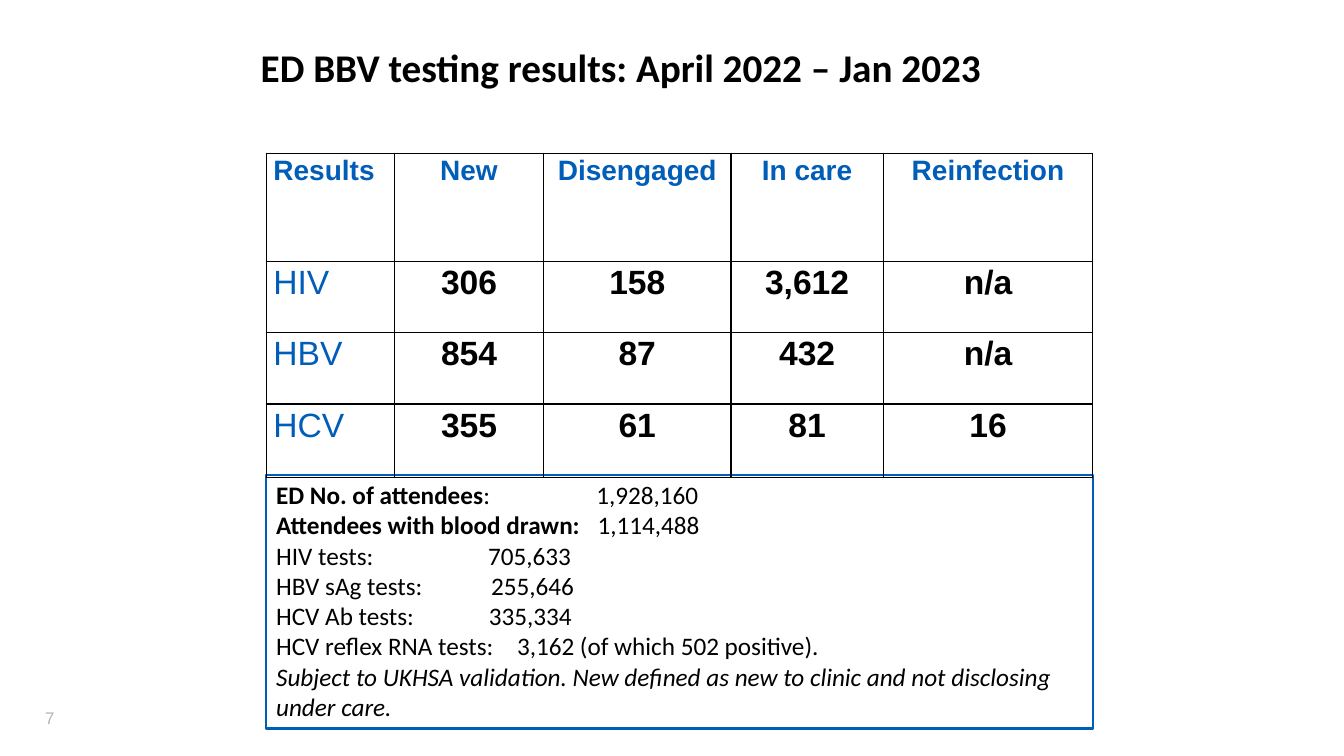
from lxml import etree
from pptx import Presentation
from pptx.dml.color import RGBColor
from pptx.enum.shapes import MSO_SHAPE
from pptx.enum.text import MSO_ANCHOR, PP_ALIGN
from pptx.oxml.ns import qn
from pptx.util import Cm, Pt

RECTANGLE = MSO_SHAPE.RECTANGLE
TOP = MSO_ANCHOR.TOP
LEFT, CENTER = PP_ALIGN.LEFT, PP_ALIGN.CENTER

COLORS = {"blue": "005EB8", "black": "000000", "grey": "ADB6BE"}

TITLE = "ED BBV testing results: April 2022 – Jan 2023"
PAGE_NUMBER = "7"
RESULTS = [
    ("Results", "New", "Disengaged", "In care", "Reinfection"),
    ("HIV", "306", "158", "3,612", "n/a"),
    ("HBV", "854", "87", "432", "n/a"),
    ("HCV", "355", "61", "81", "16"),
]
COLUMN_WIDTHS = (3.23, 3.76, 4.72, 3.84, 5.28)
ROW_HEIGHTS = (2.72, 1.8, 1.8, 1.85)
ATTENDANCE = [
    ("ED No. of attendees", ":\t1,928,160", 8.07),
    ("Attendees with blood drawn:", "\t1,114,488", 8.1),
    ("", "HIV tests:\t705,633", 5.34),
    ("", "HBV sAg tests:\t255,646", 5.42),
    ("", "HCV Ab tests:\t335,334", 5.36),
    ("", "HCV reflex RNA tests:\t3,162 (of which 502 positive).", 6.07),
]
CAVEAT = ("Subject to UKHSA validation. New defined as new to clinic "
          "and not disclosing under care.")

PANEL_LEFT = 6.71
PANEL_WIDTH = sum(COLUMN_WIDTHS)
TABLE_TOP = 3.86


def rgb(name):
    return RGBColor.from_string(COLORS[name])


def set_font(font, family, size, color, bold=None, italic=None):
    font.name, font.size = family, Pt(size)
    font.color.rgb = rgb(color)
    font.bold, font.italic = bold, italic


def add_label(slide, box, text, family, size, color, bold):
    frame = slide.shapes.add_textbox(*map(Cm, box)).text_frame
    frame.word_wrap = True
    frame.text = text
    set_font(frame.paragraphs[0].font, family, size, color, bold)


def add_tab_stop(paragraph, position):
    stops = etree.SubElement(paragraph._p.get_or_add_pPr(), qn("a:tabLst"))
    etree.SubElement(stops, qn("a:tab"), pos=str(Cm(position)), algn="l")


def add_borders(cell):
    properties = cell._tc.get_or_add_tcPr()
    for index, side in enumerate(("lnL", "lnR", "lnT", "lnB")):
        line = etree.Element(qn(f"a:{side}"), w=str(Pt(1)))
        fill = etree.SubElement(line, qn("a:solidFill"))
        etree.SubElement(fill, qn("a:srgbClr"), val=COLORS["black"])
        properties.insert(index, line)


def add_attendance(slide):
    panel = slide.shapes.add_shape(
        RECTANGLE, Cm(PANEL_LEFT), Cm(11.96), Cm(PANEL_WIDTH), Cm(6.4))
    panel.shadow.inherit = False
    panel.fill.background()
    panel.line.color.rgb = rgb("blue")
    panel.line.width = Pt(1.5)
    frame = panel.text_frame
    frame.word_wrap = True
    frame.vertical_anchor = TOP
    paragraph = frame.paragraphs[0]
    for heading, rest, position in ATTENDANCE:
        add_tab_stop(paragraph, position)
        set_font(paragraph.font, "Calibri", 18, "black")
        paragraph.alignment = LEFT
        if heading:
            run = paragraph.add_run()
            run.text = heading
            run.font.bold = True
        paragraph.add_run().text = rest
        paragraph = frame.add_paragraph()
    paragraph.text = CAVEAT
    paragraph.alignment = LEFT
    set_font(paragraph.font, "Calibri", 18, "black", italic=True)


def add_results(slide):
    table = slide.shapes.add_table(
        len(RESULTS), len(COLUMN_WIDTHS), Cm(PANEL_LEFT), Cm(TABLE_TOP),
        Cm(PANEL_WIDTH), Cm(sum(ROW_HEIGHTS))).table
    table.first_row = table.horz_banding = False
    for column, width in zip(table.columns, COLUMN_WIDTHS):
        column.width = Cm(width)
    for row, height in zip(table.rows, ROW_HEIGHTS):
        row.height = Cm(height)
    for r, values in enumerate(RESULTS):
        for c, value in enumerate(values):
            cell = table.cell(r, c)
            cell.fill.background()
            add_borders(cell)
            cell.margin_left = cell.margin_right = Cm(0.18)
            cell.margin_top = cell.margin_bottom = 0
            cell.text = value
            paragraph = cell.text_frame.paragraphs[0]
            paragraph.alignment = CENTER if c else LEFT
            paragraph.line_spacing = 1.07
            paragraph.space_after = Pt(8)
            is_header = r == 0
            set_font(paragraph.font, "Arial", 20 if is_header else 24,
                     "blue" if is_header or c == 0 else "black",
                     is_header or c > 0)


def main():
    deck = Presentation()
    deck.slide_width, deck.slide_height = Cm(33.87), Cm(19.05)
    slide = deck.slides.add_slide(deck.slide_layouts[6])
    add_label(slide, (0.89, 17.7, 1.45, 0.76), PAGE_NUMBER,
              "Arial", 12, "grey", False)
    add_attendance(slide)
    add_results(slide)
    add_label(slide, (6.32, 0.97, 18.77, 1.45), TITLE,
              "Calibri", 28, "black", True)
    deck.save("out.pptx")


if __name__ == "__main__":
    main()
